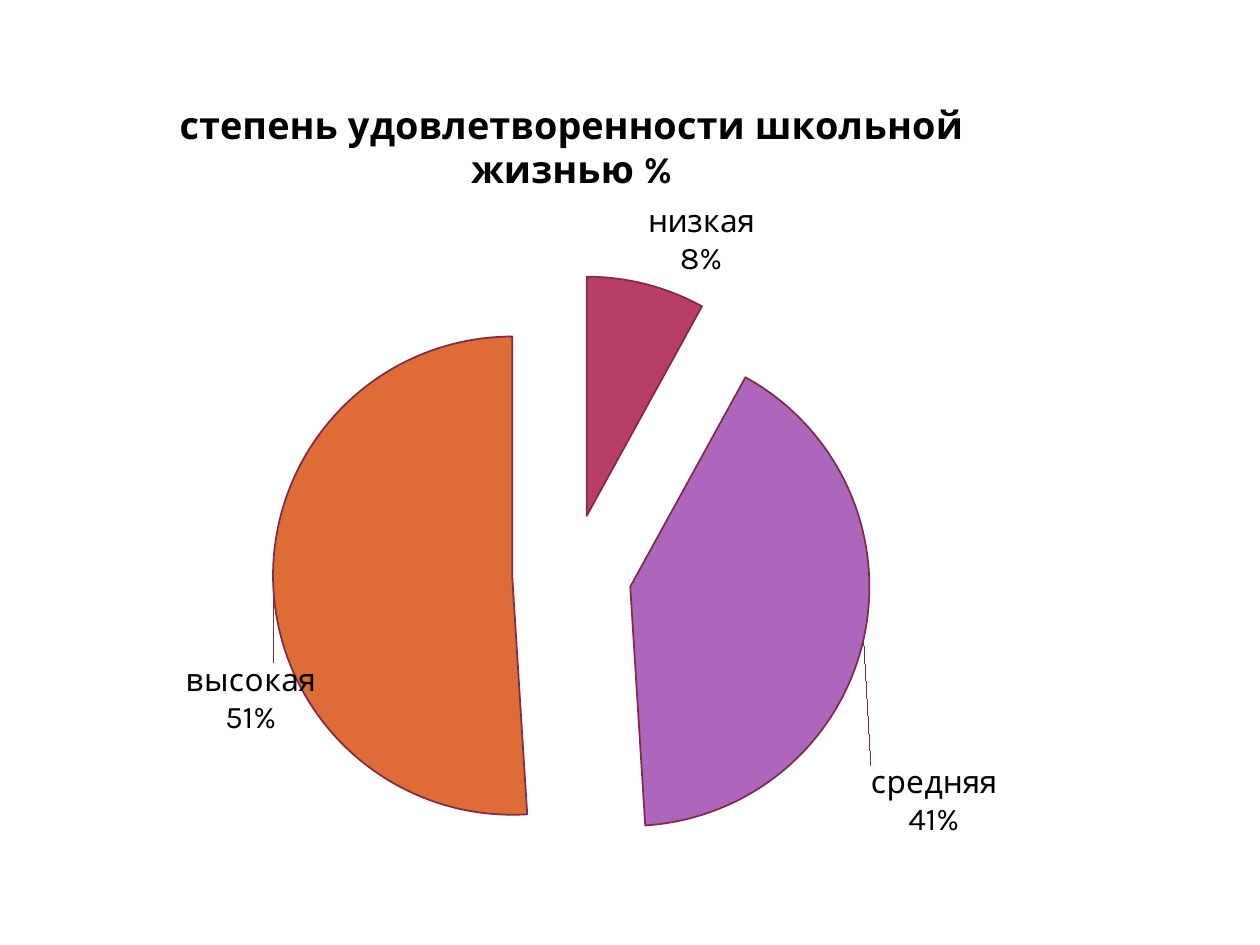
from dataclasses import dataclass

from lxml import etree
from pptx import Presentation
from pptx.chart import data
from pptx.dml import color
from pptx.enum import chart as ch
from pptx.oxml import ns
from pptx.util import Cm, Pt


@dataclass(frozen=True)
class Theme:
    """Holds the font, colours and type sizes."""
    font: str = "Karla"
    ink: str = "000000"
    edge: str = "802C48"
    fills: tuple = ("B83D68", "AC66BB", "DE6C36")
    head: float = 21.6
    body: float = 18
    rule: float = 1


THEME = Theme()
TITLE = "степень удовлетворенности школьной жизнью %"
PARTS = {"низкая": 8, "средняя": 41, "высокая": 51}
SHIFTS = {1: (0, 0.15), 2: (0.05, 0.14)}


def rgb(code):
    """Turn a hex code into a colour."""
    return color.RGBColor.from_string(code)


def node(tag, val=None):
    """Make a chart element, with a value if one is given."""
    item = etree.Element(ns.qn(f"c:{tag}"))
    if val is not None:
        item.set("val", str(val))
    return item


def layout(**vals):
    """Make a manual layout from its values."""
    outer = node("layout")
    inner = node("manualLayout")
    outer.append(inner)
    for tag, val in vals.items():
        inner.append(node(tag, val))
    return outer


def style(font, size, bold=False):
    """Set the look of a font."""
    font.name, font.size, font.bold = THEME.font, Pt(size), bold
    font.color.rgb = rgb(THEME.ink)


def outline(form):
    """Draw the slice border."""
    form.line.color.rgb = rgb(THEME.edge)
    form.line.width = Pt(THEME.rule)


def label(idx, x, y):
    """Make a slice label moved by a share of the chart."""
    item = node("dLbl")
    item.append(node("idx", idx))
    item.append(layout(x=x, y=y))
    item.append(node("dLblPos", "outEnd"))
    for key in ("LegendKey", "Val", "CatName", "SerName", "Percent", "BubbleSize"):
        item.append(node(f"show{key}", int(key in ("CatName", "Percent"))))
    item.append(split())
    return item


def split():
    """Make the line break between name and share."""
    item = node("separator")
    item.text = "\n"
    return item


def add_labels(series):
    """Show name and share beside each slice."""
    tags = series.data_labels
    style(tags.font, THEME.body)
    tags.show_value = False
    tags.show_category_name = tags.show_percentage = True
    tags.position = ch.XL_LABEL_POSITION.OUTSIDE_END
    root = tags._element
    root.find(ns.qn("c:showBubbleSize")).addnext(split())
    for spot, (idx, shift) in enumerate(SHIFTS.items()):
        root.insert(spot, label(idx, *shift))


def add_title(chart):
    """Write the chart title."""
    chart.has_title = True
    frame = chart.chart_title.text_frame
    frame.text = TITLE
    style(frame.paragraphs[0].runs[0].font, THEME.head, True)
    root = chart.chart_title._element
    for old in root.findall(ns.qn("c:layout")):
        root.remove(old)
    root.find(ns.qn("c:tx")).addnext(
        layout(xMode="edge", yMode="edge", x=0.11, y=0.04))


def add_pie(slide, left, top, width, height):
    """Place the exploded pie in the given box."""
    source = data.CategoryChartData()
    source.categories = list(PARTS)
    source.add_series("Series 1", list(PARTS.values()))
    chart = slide.shapes.add_chart(
        ch.XL_CHART_TYPE.PIE, left, top, width, height, source).chart
    chart.has_legend = False
    style(chart.font, THEME.body)
    add_title(chart)
    plot = chart.plots[0]
    plot.vary_by_categories = True
    series = plot.series[0]
    outline(series.format)
    series._element.find(ns.qn("c:spPr")).addnext(node("explosion", 25))
    for idx, fill in enumerate(THEME.fills):
        form = series.points[idx].format
        form.fill.solid()
        form.fill.fore_color.rgb = rgb(fill)
        outline(form)
    add_labels(series)
    area = plot._element.getparent()
    for old in area.findall(ns.qn("c:layout")):
        area.remove(old)
    area.insert(0, layout(layoutTarget="inner", xMode="edge", yMode="edge",
                          x=0.21, y=0.26, w=0.6, h=0.72))


def main():
    """Build and save the slide."""
    deck = Presentation()
    deck.slide_width, deck.slide_height = Cm(25.4), Cm(19.05)
    slide = deck.slides.add_slide(deck.slide_layouts[6])
    add_pie(slide, Cm(1.27), Cm(1.19), Cm(20.12), Cm(16.74))
    deck.save("out.pptx")


if __name__ == "__main__":
    main()
